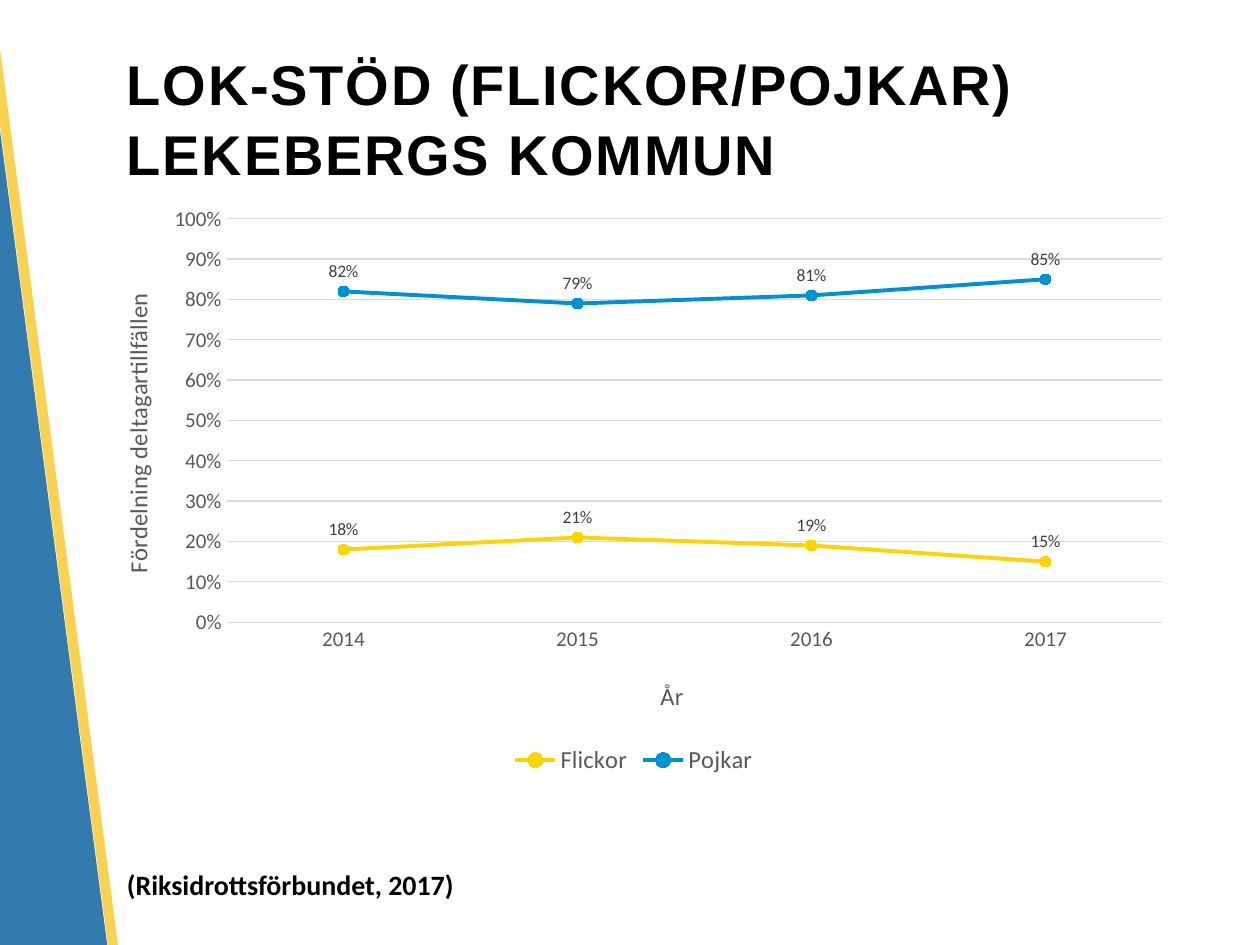
"""Build a slide with a line chart of participation shares by gender."""
from dataclasses import dataclass

from lxml.etree import SubElement
from pptx import Presentation
from pptx.chart.data import CategoryChartData
from pptx.dml.color import RGBColor
from pptx.enum.chart import (XL_CHART_TYPE, XL_LABEL_POSITION, XL_LEGEND_POSITION,
                             XL_MARKER_STYLE, XL_TICK_MARK)
from pptx.enum.shapes import MSO_SHAPE
from pptx.enum.text import MSO_ANCHOR, MSO_AUTO_SIZE
from pptx.oxml import parse_xml
from pptx.oxml.ns import nsdecls, qn
from pptx.util import Cm, Pt

COLORS = {
    "black": "000000", "blue": "005B9C", "yellow": "FAC828", "girls": "FDD400",
    "boys": "0090D4", "axis": "595959", "label": "404040", "grid": "D9D9D9",
}
YEARS = ("2014", "2015", "2016", "2017")


@dataclass(frozen=True)
class Band:
    left: float
    top: float
    width: float
    height: float
    color: str
    opacity: int


@dataclass(frozen=True)
class Line:
    name: str
    values: tuple
    color: str


BANDS = (
    Band(-1.32, -4.17, 2.31, 28.78, "blue", 80),
    Band(0.97, -4.5, 0.2, 28.75, "yellow", 81),
)
LINES = (
    Line("Flickor", (0.18, 0.21, 0.19, 0.15), "girls"),
    Line("Pojkar", (0.82, 0.79, 0.81, 0.85), "boys"),
)


def rgb(name: str) -> RGBColor:
    """Return the named colour."""
    return RGBColor.from_string(COLORS[name])


def set_font(font, size: float, color: str, name: str = "Calibri", bold: bool = False) -> None:
    """Format a font."""
    font.name, font.size, font.bold = name, Pt(size), bold
    font.color.rgb = rgb(color)


def add_text(s, text: str, box: tuple, *, size: float, name: str = "Calibri",
             spacing: float = 0, wrap: bool = True, anchor=MSO_ANCHOR.TOP,
             autosize=MSO_AUTO_SIZE.NONE, line_spacing: float = 1.0) -> None:
    """Add a bold black text box."""
    tf = s.shapes.add_textbox(*map(Cm, box)).text_frame
    tf.word_wrap, tf.vertical_anchor, tf.auto_size = wrap, anchor, autosize
    p = tf.paragraphs[0]
    p.line_spacing = line_spacing
    r = p.add_run()
    r.text = text
    set_font(r.font, size, "black", name, True)
    if spacing:
        r.font._element.set("spc", str(round(spacing * 100)))


def add_band(s, band: Band) -> None:
    """Add one slanted translucent band."""
    sp = s.shapes.add_shape(MSO_SHAPE.RECTANGLE, Cm(band.left), Cm(band.top),
                            Cm(band.width), Cm(band.height))
    sp.rotation = 352.5
    sp.shadow.inherit = False
    sp.line.fill.background()
    sp.fill.solid()
    sp.fill.fore_color.rgb = rgb(band.color)
    clr = sp._element.spPr.find(".//" + qn("a:srgbClr"))
    SubElement(clr, qn("a:alpha"), val=str(band.opacity * 1000))


def make_layout(inner: bool = False, **fractions: float):
    """Return a manual chart layout in fractions of the chart area."""
    modes = '<c:layoutTarget val="inner"/>' if inner else ""
    modes += '<c:xMode val="edge"/><c:yMode val="edge"/>'
    places = "".join(f'<c:{k} val="{v}"/>' for k, v in fractions.items())
    return parse_xml(f'<c:layout {nsdecls("c")}><c:manualLayout>{modes}{places}'
                     '</c:manualLayout></c:layout>')


def format_axis(axis, title: str, x: float, y: float) -> None:
    """Title and format an axis."""
    axis.major_tick_mark = axis.minor_tick_mark = XL_TICK_MARK.NONE
    set_font(axis.tick_labels.font, 12, "axis")
    r = axis.axis_title.text_frame.paragraphs[0].add_run()
    r.text = title
    set_font(r.font, 14, "axis")
    el = axis.axis_title._element
    for old in el.findall(qn("c:layout")):
        el.remove(old)
    el.find(qn("c:tx")).addnext(make_layout(x=x, y=y))


def format_series(series, color: str) -> None:
    """Format a line with its markers and labels."""
    series.smooth = False
    series.format.line.color.rgb = rgb(color)
    series.format.line.width = Pt(2.25)
    marker = series.marker
    marker.style, marker.size = XL_MARKER_STYLE.CIRCLE, 6
    marker.format.fill.solid()
    marker.format.fill.fore_color.rgb = rgb(color)
    marker.format.line.color.rgb = rgb(color)
    labels = series.data_labels
    labels.show_value = True
    labels.position = XL_LABEL_POSITION.ABOVE
    labels.number_format, labels.number_format_is_linked = "0%", False
    set_font(labels.font, 10, "label")


def add_line_chart(s, box: tuple) -> None:
    """Add the chart of shares per year."""
    data = CategoryChartData(number_format="0%")
    data.categories = YEARS
    for line in LINES:
        data.add_series(line.name, line.values)
    chart = s.shapes.add_chart(XL_CHART_TYPE.LINE_MARKERS, *map(Cm, box), data).chart
    set_font(chart.font, 10, "black")
    chart.has_title = False
    chart.has_legend = True
    chart.legend.position = XL_LEGEND_POSITION.BOTTOM
    chart.legend.include_in_layout = False
    set_font(chart.legend.font, 14, "axis")

    plot = chart.plots[0]
    plot.vary_by_categories = False
    for series, line in zip(plot.series, LINES):
        format_series(series, line.color)

    cat, val = chart.category_axis, chart.value_axis
    format_axis(cat, "År", 0.52, 0.82)
    format_axis(val, "Fördelning deltagartillfällen", 0.03, 0.16)
    val.minimum_scale, val.maximum_scale, val.major_unit = 0, 1, 0.1
    val.tick_labels.number_format = "0%"
    val.tick_labels.number_format_is_linked = False
    val.format.line.fill.background()
    for rule in (cat.format.line, val.major_gridlines.format.line):
        rule.color.rgb = rgb("grid")
        rule.width = Pt(0.75)

    area = chart._chartSpace.chart.plotArea
    for old in area.findall(qn("c:layout")):
        area.remove(old)
    area.insert(0, make_layout(True, x=0.13, y=0.04, w=0.85, h=0.69))


def main() -> None:
    """Build and save the slide."""
    prs = Presentation()
    prs.slide_width, prs.slide_height = Cm(25.4), Cm(19.05)
    s = prs.slides.add_slide(prs.slide_layouts[6])
    for band in BANDS:
        add_band(s, band)
    add_text(s, "LOK-STÖD (FLICKOR/POJKAR) LEKEBERGS KOMMUN", (2.31, 0.76, 21.56, 3.18),
             size=32, name="Arial", spacing=1, anchor=MSO_ANCHOR.MIDDLE, line_spacing=1.04)
    add_text(s, "(Riksidrottsförbundet, 2017)", (2.31, 17.37, 7.21, 0.94), size=16,
             wrap=False, autosize=MSO_AUTO_SIZE.SHAPE_TO_FIT_TEXT)
    add_line_chart(s, (1.68, 3.94, 22.2, 11.79))
    prs.save("out.pptx")


if __name__ == "__main__":
    main()
